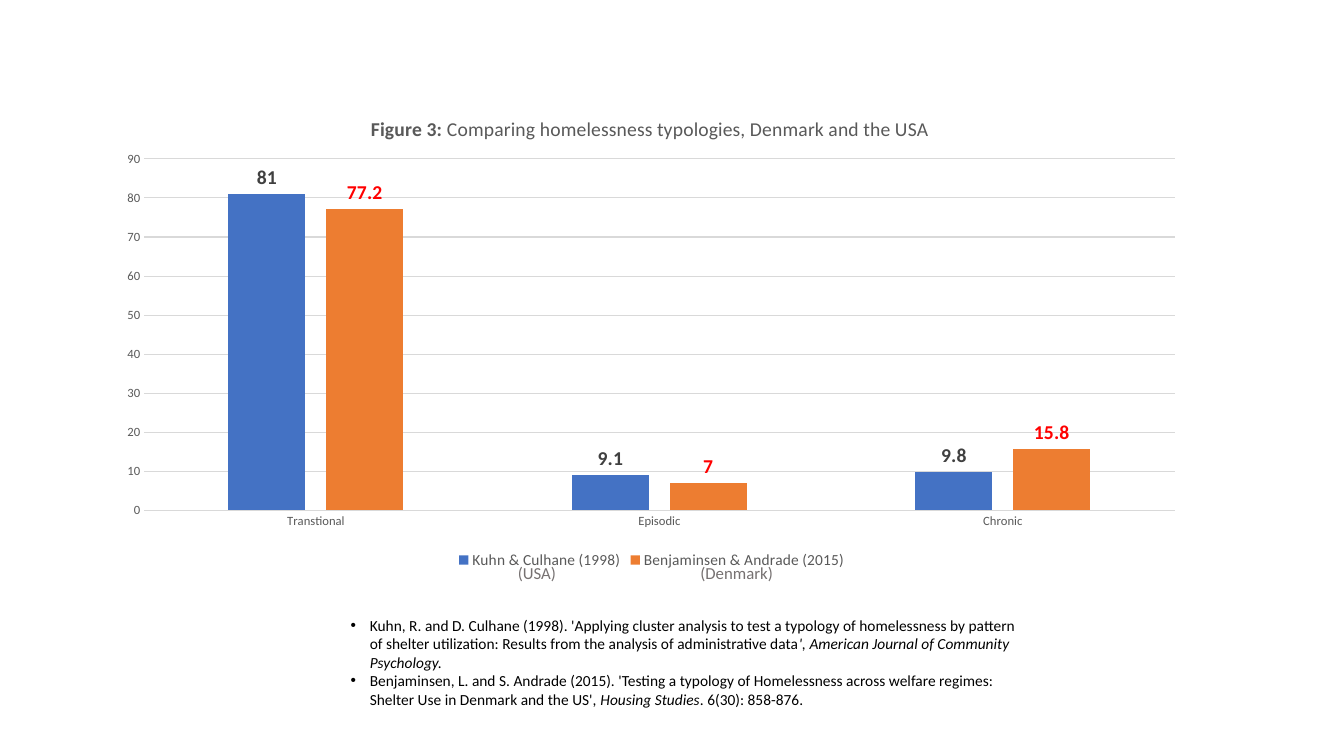
from dataclasses import dataclass

from lxml.etree import SubElement
from pptx import Presentation
from pptx.chart.data import CategoryChartData
from pptx.dml.color import RGBColor
from pptx.enum.chart import XL_CHART_TYPE as ChartType
from pptx.enum.chart import XL_LABEL_POSITION as LabelPosition
from pptx.enum.chart import XL_LEGEND_POSITION as LegendPosition
from pptx.enum.chart import XL_TICK_MARK as TickMark
from pptx.enum.text import MSO_AUTO_SIZE as AutoSize
from pptx.oxml.ns import qn
from pptx.util import Cm, Pt


@dataclass(frozen=True)
class Theme:
    font: str = "Calibri"
    black: str = "000000"
    text: str = "595959"
    country: str = "767171"
    grid: str = "D9D9D9"
    axis_size: int = 9
    small_size: int = 11
    country_size: int = 12
    large_size: int = 14


THEME = Theme()

CATEGORIES = ["Transtional", "Episodic", "Chronic"]
# Name, values, bar colour, label colour
SERIES = [
    ("Kuhn & Culhane (1998)", (81, 9.1, 9.8), "4472C4", "404040"),
    ("Benjaminsen & Andrade (2015)", (77.2, 7, 15.8), "ED7D31", "FF0000"),
]
TITLE = [("Figure 3: ", True),
         ("Comparing homelessness typologies, Denmark and the USA", False)]
# Each reference is a list of (text, italic)
REFERENCES = [
    [("Kuhn, R. and D. Culhane (1998). 'Applying cluster analysis to test a "
      "typology of homelessness by pattern of shelter utilization: Results "
      "from the analysis of administrative data", False),
     ("', American Journal of Community Psychology.", True)],
    [("Benjaminsen, L. and S. Andrade (2015). 'Testing a typology of "
      "Homelessness across welfare regimes: Shelter Use in Denmark and the "
      "US', ", False),
     ("Housing Studies", True),
     (". 6(30): 858-876.", False)],
]


def set_font(font, size, color, **options):
    formats = {"name": THEME.font, "size": Pt(size), **options}
    for name, value in formats.items():
        setattr(font, name, value)
    font.color.rgb = RGBColor.from_string(color)


def set_layout(element, index, **fractions):
    """Fix a chart part at fractions of the chart's size."""
    for old_layout in element.findall(qn("c:layout")):
        element.remove(old_layout)
    layout = SubElement(element, qn("c:layout"))
    element.insert(index, layout)
    manual = SubElement(layout, qn("c:manualLayout"))
    if "w" in fractions:
        SubElement(manual, qn("c:layoutTarget")).set("val", "inner")
    for axis in "xy":
        SubElement(manual, qn(f"c:{axis}Mode")).set("val", "edge")
    for name, value in fractions.items():
        SubElement(manual, qn(f"c:{name}")).set("val", str(value))


def add_axes(chart):
    for axis in (chart.category_axis, chart.value_axis):
        axis.major_tick_mark = axis.minor_tick_mark = TickMark.NONE
        set_font(axis.tick_labels.font, THEME.axis_size, THEME.text)
    value_axis = chart.value_axis
    scale = {"minimum_scale": 0, "maximum_scale": 90, "major_unit": 10}
    for name, value in scale.items():
        setattr(value_axis, name, value)
    value_axis.format.line.fill.background()
    for part in (chart.category_axis, value_axis.major_gridlines):
        part.format.line.width = Pt(0.75)
        part.format.line.color.rgb = RGBColor.from_string(THEME.grid)


def add_typology_chart(slide, left, top, width, height):
    data = CategoryChartData()
    data.categories = CATEGORIES
    for name, values, *_ in SERIES:
        data.add_series(name, values)
    chart = slide.shapes.add_chart(
        ChartType.COLUMN_CLUSTERED, left, top, width, height, data).chart
    set_font(chart.font, 10, THEME.black)

    # Title
    paragraph = chart.chart_title.text_frame.paragraphs[0]
    for text, bold in TITLE:
        run = paragraph.add_run()
        run.text = text
        set_font(run.font, THEME.large_size, THEME.text, bold=bold)
    chart.chart_title.include_in_layout = False
    set_layout(chart.chart_title._element, 1, x=0.24, y=0.04)

    # Bars and their labels
    plot = chart.plots[0]
    bars = {"gap_width": 219, "overlap": -27, "vary_by_categories": False}
    for name, value in bars.items():
        setattr(plot, name, value)
    for series, (_, _, bar_color, label_color) in zip(plot.series, SERIES):
        series.format.fill.solid()
        series.format.fill.fore_color.rgb = RGBColor.from_string(bar_color)
        labels = series.data_labels
        labels.show_value = True
        labels.position = LabelPosition.OUTSIDE_END
        set_font(labels.font, THEME.large_size, label_color, bold=True)
    add_axes(chart)
    set_layout(chart._chartSpace.chart.plotArea, 0,
               x=0.035, y=0.136, w=0.944, h=0.733)

    # Legend
    chart.has_legend = True
    chart.legend.position = LegendPosition.BOTTOM
    chart.legend.include_in_layout = False
    set_font(chart.legend.font, THEME.small_size, THEME.text)


def add_text_box(slide, left, top, width, height):
    frame = slide.shapes.add_textbox(left, top, width, height).text_frame
    frame.word_wrap = True
    frame.auto_size = AutoSize.SHAPE_TO_FIT_TEXT
    return frame


def add_country(slide, text, left, top, width, height):
    frame = add_text_box(slide, left, top, width, height)
    run = frame.paragraphs[0].add_run()
    run.text = text
    set_font(run.font, THEME.country_size, THEME.country)


def add_references(slide, left, top, width, height):
    frame = add_text_box(slide, left, top, width, height)
    for index, reference in enumerate(REFERENCES):
        paragraph = frame.add_paragraph() if index else frame.paragraphs[0]
        # Hanging bullet
        properties = paragraph._p.get_or_add_pPr()
        indent = Cm(0.48)
        properties.set("marL", str(indent))
        properties.set("indent", str(-indent))
        SubElement(properties, qn("a:buFont")).set("typeface", "Arial")
        SubElement(properties, qn("a:buChar")).set("char", "•")
        for text, italic in reference:
            run = paragraph.add_run()
            run.text = text
            set_font(run.font, THEME.small_size, THEME.black, italic=italic)


def main():
    presentation = Presentation()
    presentation.slide_width = Cm(33.87)
    presentation.slide_height = Cm(19.05)
    slide = presentation.slides.add_slide(presentation.slide_layouts[6])

    add_typology_chart(slide, Cm(2.67), Cm(2.36), Cm(27.51), Cm(12.09))
    add_references(slide, Cm(8.59), Cm(15.39), Cm(17.68), Cm(2.62))
    # Countries under the legend entries
    for text, left in (("(Denmark)", 17.4), ("(USA)", 12.8)):
        add_country(slide, text, Cm(left), Cm(14.05), Cm(2.34), Cm(0.76))

    presentation.save("out.pptx")


if __name__ == "__main__":
    main()
